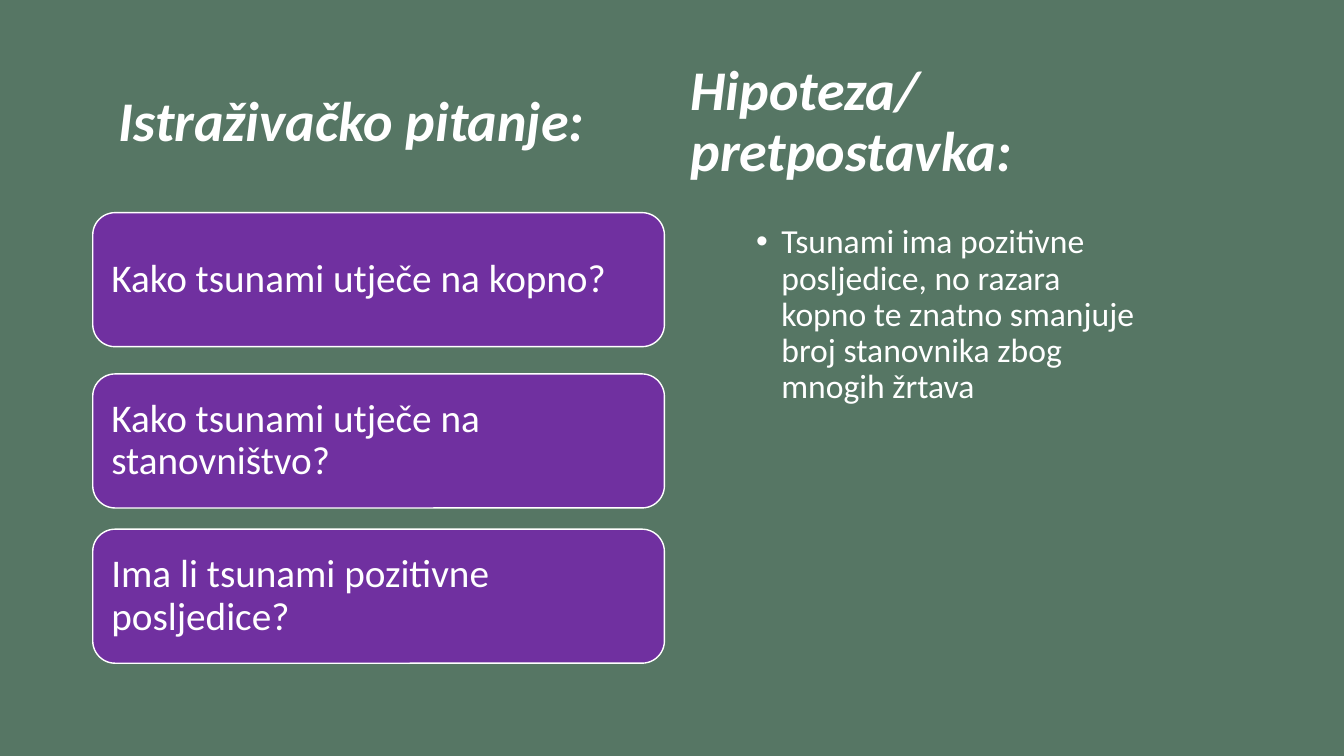
from pptx import Presentation
from pptx.dml.color import RGBColor
from pptx.enum.shapes import MSO_SHAPE as Shape
from pptx.enum.text import MSO_ANCHOR as Anchor, MSO_AUTO_SIZE as AutoSize, PP_ALIGN as Align
from pptx.util import Pt

PX = 9144  # EMU per px, 100 px to the inch
COLORS = {"background": "567664", "card": "7030A0", "white": "FFFFFF"}
QUESTIONS = [
    (211, "Kako tsunami utječe na kopno?"),
    (371, "Kako tsunami utječe na stanovništvo?"),
    (525, "Ima li tsunami pozitivne posljedice?"),
]


class SlideBuilder:
    """Holds the style and the current slide."""

    font = "Calibri"
    line_spacing = 0.9

    def __init__(self, page):
        self.page = page

    def color(self, name):
        return RGBColor.from_string(COLORS[name])

    def background(self, name):
        fill = self.page.background.fill
        fill.solid()
        fill.fore_color.rgb = self.color(name)

    def place(self, box, left, top, width, height):
        box.left, box.top = left * PX, top * PX
        box.width, box.height = width * PX, height * PX

    def set_text(self, box, text, size, anchor=Anchor.MIDDLE, strong=False):
        frame = box.text_frame
        frame.text = text
        frame.word_wrap = True
        frame.auto_size = AutoSize.NONE
        frame.vertical_anchor = anchor
        para = frame.paragraphs[0]
        para.alignment = Align.LEFT
        para.line_spacing = self.line_spacing
        for span in para.runs:
            span.font.name = self.font
            span.font.size = Pt(size)
            span.font.bold = span.font.italic = strong
            span.font.color.rgb = self.color("white")
        return para

    def title(self, text, *area):
        box = self.page.shapes.title
        self.place(box, *area)
        self.set_text(box, text, 40, strong=True)

    def heading(self, text, *area):
        box = self.page.shapes.add_textbox(*(value * PX for value in area))
        self.set_text(box, text, 40, strong=True)

    def bullet(self, text, *area):
        box = self.page.placeholders[1]
        self.place(box, *area)
        para = self.set_text(box, text, 24, anchor=Anchor.TOP)
        para.space_before = Pt(10)
        props = para._p.get_or_add_pPr()
        props.set("marL", str(25 * PX))
        props.set("indent", str(-25 * PX))

    def card(self, text, *area):
        box = self.page.shapes.add_shape(
            Shape.ROUNDED_RECTANGLE, *(value * PX for value in area))
        box.shadow.inherit = False
        box.fill.solid()
        box.fill.fore_color.rgb = self.color("card")
        box.line.color.rgb = self.color("white")
        box.line.width = Pt(1)
        frame = box.text_frame
        frame.margin_left = frame.margin_right = 12 * PX
        frame.margin_top = frame.margin_bottom = 12 * PX
        self.set_text(box, text, 28)


def main():
    deck = Presentation()
    deck.slide_width, deck.slide_height = 1333 * PX, 750 * PX
    builder = SlideBuilder(deck.slides.add_slide(deck.slide_layouts[1]))
    builder.background("background")

    # Hypothesis on the right
    builder.title("Hipoteza/pretpostavka:", 675, 57, 540, 130)
    builder.bullet(
        "Tsunami ima pozitivne posljedice, no razara kopno te znatno "
        "smanjuje broj stanovnika zbog mnogih žrtava", 740, 218, 411, 476)

    # Research questions on the left
    builder.heading("Istraživačko pitanje:", 108, 57, 527, 130)
    for top, question in QUESTIONS:
        builder.card(question, 92, top, 567, 133)

    deck.save("out.pptx")


if __name__ == "__main__":
    main()
